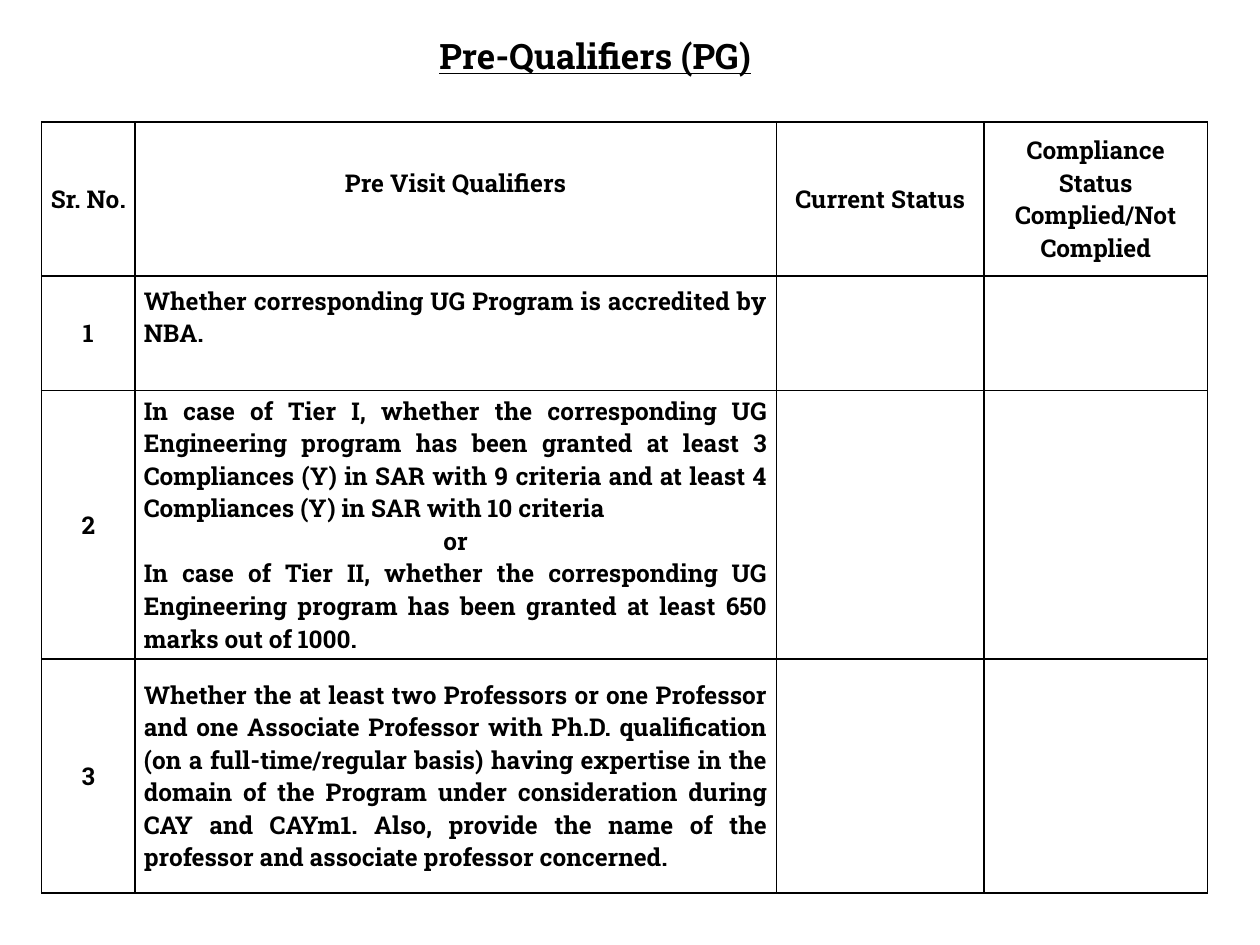
"""Build the postgraduate pre-qualifiers slide with its compliance table."""
import dataclasses

import lxml.etree
import pptx
import pptx.dml.color
import pptx.enum.text
import pptx.oxml.ns
import pptx.util

Cm = pptx.util.Cm
CENTER = pptx.enum.text.PP_ALIGN.CENTER
JUSTIFY = pptx.enum.text.PP_ALIGN.JUSTIFY


@dataclasses.dataclass(frozen=True)
class Theme:
    font: str = "Roboto Slab"
    ink: str = "000000"
    title_size: int = 20
    table_size: int = 14
    border_width: int = 1


theme = Theme()


def write_paragraph(paragraph, text, size, alignment):
    paragraph.text = text
    paragraph.alignment = alignment
    paragraph.font.name = theme.font
    paragraph.font.size = pptx.util.Pt(size)
    paragraph.font.bold = True
    paragraph.font.color.rgb = pptx.dml.color.RGBColor.from_string(theme.ink)


def add_borders(cell):
    qn = pptx.oxml.ns.qn
    properties = cell._tc.get_or_add_tcPr()
    for side in ("a:lnL", "a:lnR", "a:lnT", "a:lnB"):
        line = lxml.etree.SubElement(properties, qn(side), w=str(pptx.util.Pt(theme.border_width)))
        fill = lxml.etree.SubElement(line, qn("a:solidFill"))
        lxml.etree.SubElement(fill, qn("a:srgbClr"), val=theme.ink)


column_widths = [1.88, 12.93, 4.19, 4.5]
row_heights = [3.1, 2.31, 5.41, 4.72]
rows = [
    [
        [("Sr. No.", CENTER)],
        [("Pre Visit Qualifiers", CENTER)],
        [("Current Status", CENTER)],
        [("Compliance Status", CENTER), ("Complied/Not Complied", CENTER)],
    ],
    [
        [("1", CENTER)],
        [("Whether corresponding UG Program is accredited by NBA.", JUSTIFY)],
        [],
        [],
    ],
    [
        [("2", CENTER)],
        [
            ("In case of Tier I, whether the corresponding UG Engineering program has been "
             "granted at least 3 Compliances (Y) in SAR with 9 criteria and at least 4 "
             "Compliances (Y) in SAR with 10 criteria", JUSTIFY),
            ("or", CENTER),
            ("In case of Tier II, whether the corresponding UG Engineering program has been "
             "granted at least 650 marks out of 1000.", JUSTIFY),
        ],
        [],
        [],
    ],
    [
        [("3", CENTER)],
        [("Whether the at least two Professors or one Professor and one Associate Professor "
          "with Ph.D. qualification (on a full-time/regular basis) having expertise in the "
          "domain of the Program under consideration during CAY and CAYm1. Also, provide the "
          "name of the professor and associate professor concerned.", JUSTIFY)],
        [],
        [],
    ],
]
raised_cells = {(0, 1), (1, 1)}

presentation = pptx.Presentation()
presentation.slide_width = Cm(25.4)
presentation.slide_height = Cm(19.05)
slide = presentation.slides.add_slide(presentation.slide_layouts[6])

title = slide.shapes.add_textbox(Cm(0), Cm(0.58), Cm(24), Cm(1.88))
title.text_frame.word_wrap = True
title_paragraph = title.text_frame.paragraphs[0]
write_paragraph(title_paragraph, "Pre-Qualifiers (PG)", theme.title_size, CENTER)
title_paragraph.font.underline = True

table = slide.shapes.add_table(
    len(row_heights), len(column_widths),
    Cm(0.84), Cm(2.46), Cm(sum(column_widths)), Cm(sum(row_heights)),
).table
table.first_row = False
table.horz_banding = False
for column, width in zip(table.columns, column_widths):
    column.width = Cm(width)
for row, height in zip(table.rows, row_heights):
    row.height = Cm(height)

for row_index, row_content in enumerate(rows):
    for column_index, cell_content in enumerate(row_content):
        cell = table.cell(row_index, column_index)
        add_borders(cell)
        cell.fill.background()
        cell.vertical_anchor = pptx.enum.text.MSO_ANCHOR.MIDDLE
        cell.margin_left = cell.margin_right = Cm(0.18)
        cell.margin_top = Cm(0)
        cell.margin_bottom = Cm(0.65 if (row_index, column_index) in raised_cells else 0)
        for paragraph_index, (text, alignment) in enumerate(cell_content):
            frame = cell.text_frame
            paragraph = frame.add_paragraph() if paragraph_index else frame.paragraphs[0]
            write_paragraph(paragraph, text, theme.table_size, alignment)

presentation.save("out.pptx")
